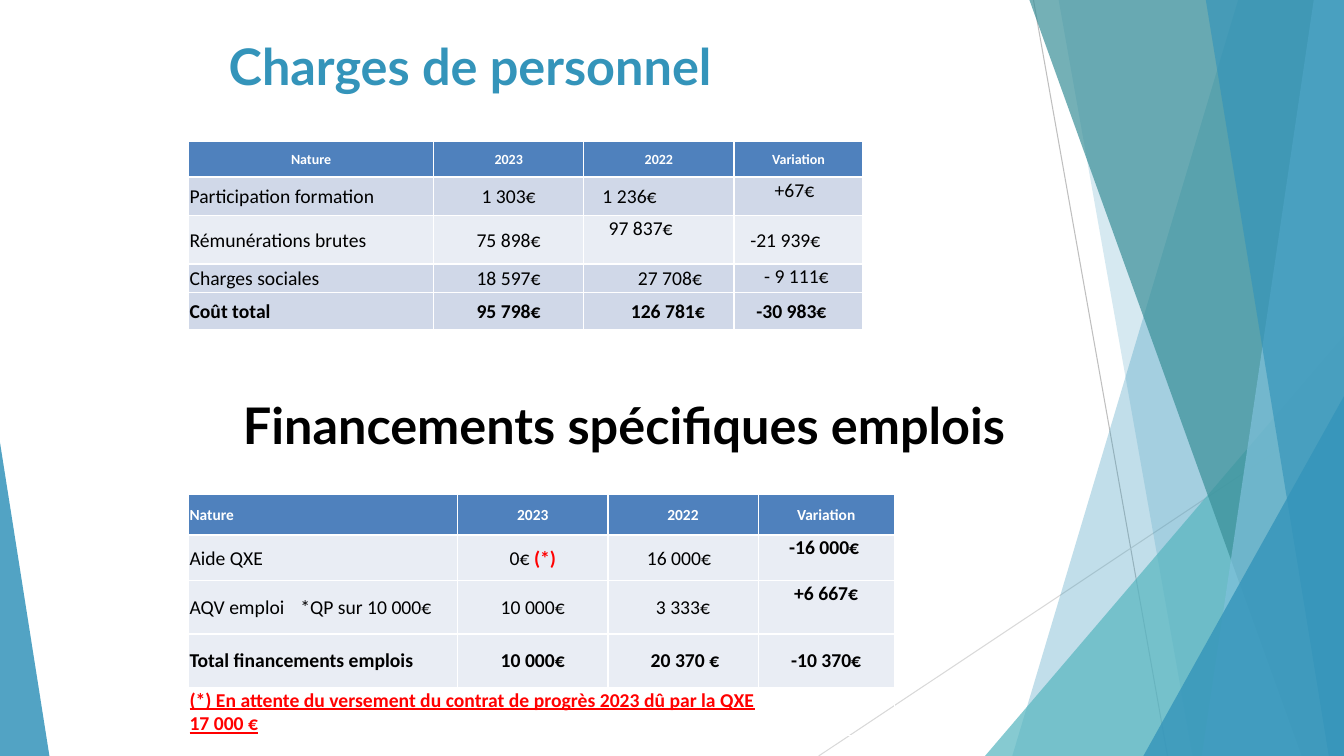
from dataclasses import dataclass

import lxml.etree
import pptx
import pptx.dml.color
import pptx.enum.shapes
import pptx.enum.text
import pptx.oxml.ns
import pptx.util

Inches = pptx.util.Inches
Align = pptx.enum.text.PP_ALIGN
Anchor = pptx.enum.text.MSO_ANCHOR
qn = pptx.oxml.ns.qn

WIDE, HIGH = 13.33, 7.5


@dataclass(frozen=True)
class Theme:
    blue: str = "3494BA"
    teal: str = "58B6C0"
    deep: str = "3A8F98"
    sky: str = "7FC1DB"
    head: str = "4F81BD"
    band: str = "D0D8E8"
    pale: str = "E9EDF4"
    white: str = "FFFFFF"
    black: str = "000000"
    red: str = "FF0000"
    title_font: str = "Lato"
    body_font: str = "Calibri"
    title_size: int = 36
    body_size: int = 14


THEME = Theme()


@dataclass
class Ray:
    start: tuple[float, float]
    end: tuple[float, float]
    color: str


@dataclass
class Pane:
    """Four-sided facet that reaches the right edge."""
    top: float
    foot: float
    color: str
    alpha: int


@dataclass
class Wedge:
    """Right triangle standing on the bottom edge; tip 0 is left, 1 is right."""
    left: float
    top: float
    width: float
    tip: int
    color: str
    alpha: int


@dataclass
class Title:
    text: str
    box: tuple[float, float, float, float]
    color: str
    align: Align


@dataclass
class Item:
    """Table cell; shift moves centred text sideways, mark is a red suffix."""
    text: str
    shift: float = 0
    top: bool = False
    bold: bool = False
    mark: str = ""
    tab: float = 0


@dataclass
class Row:
    height: float
    fill: str
    items: list[Item]
    bold: bool = False


@dataclass
class Grid:
    left: float
    top: float
    cols: list[float]
    head_size: int
    head_align: Align
    rows: list[Row]
    note: str = ""


def rgb(color: str) -> pptx.dml.color.RGBColor:
    return pptx.dml.color.RGBColor.from_string(color)


def style(run, size: int, color: str, font: str, bold: bool) -> None:
    run.font.size = pptx.util.Pt(size)
    run.font.name = font
    run.font.bold = bold
    run.font.color.rgb = rgb(color)


def draw_ray(slide, ray: Ray) -> None:
    line = slide.shapes.add_connector(
        pptx.enum.shapes.MSO_CONNECTOR.STRAIGHT,
        *(Inches(n) for n in ray.start + ray.end))
    line.line.color.rgb = rgb(ray.color)
    line.line.width = pptx.util.Pt(0.75)
    lxml.etree.SubElement(line.element.spPr, qn("a:effectLst"))


def draw_facet(slide, facet: Pane | Wedge) -> None:
    if isinstance(facet, Pane):
        form = slide.shapes.build_freeform(Inches(facet.top), 0)
        form.add_line_segments([(Inches(x), Inches(y)) for x, y in (
            (WIDE, 0), (WIDE, HIGH), (facet.foot, HIGH))])
        shape = form.convert_to_shape()
    else:
        shape = slide.shapes.add_shape(
            pptx.enum.shapes.MSO_SHAPE.ISOSCELES_TRIANGLE,
            Inches(facet.left), Inches(facet.top),
            Inches(facet.width), Inches(HIGH - facet.top))
        shape.adjustments[0] = facet.tip
    shape.shadow.inherit = False
    shape.line.fill.background()
    shape.fill.solid()
    shape.fill.fore_color.rgb = rgb(facet.color)
    tint = shape.element.spPr.find(qn("a:solidFill")).find(qn("a:srgbClr"))
    lxml.etree.SubElement(tint, qn("a:alpha"), val=str(facet.alpha * 1000))


def draw_title(slide, title: Title) -> None:
    box = slide.shapes.add_textbox(*(Inches(n) for n in title.box))
    box.text_frame.word_wrap = True
    box.text_frame.text = title.text
    para = box.text_frame.paragraphs[0]
    para.alignment = title.align
    style(para.runs[0], THEME.title_size, title.color, THEME.title_font, True)


def add_edges(cell, top: float, base: float) -> None:
    for side, width in (("L", 1), ("R", 1), ("T", top), ("B", base)):
        edge = lxml.etree.SubElement(
            cell._tc.get_or_add_tcPr(), qn(f"a:ln{side}"),
            w=str(pptx.util.Pt(width)))
        fill = lxml.etree.SubElement(edge, qn("a:solidFill"))
        lxml.etree.SubElement(fill, qn("a:srgbClr"), val=THEME.white)


def fill_cell(cell, item: Item, align: Align, size: int, color: str,
              bold: bool) -> None:
    cell.margin_left = Inches(0.01 + max(2 * item.shift, 0))
    cell.margin_right = Inches(0.01 + max(-2 * item.shift, 0))
    cell.margin_top, cell.margin_bottom = Inches(0.01), 0
    cell.vertical_anchor = Anchor.TOP if item.top else Anchor.MIDDLE
    cell.text_frame.text = item.text
    para = cell.text_frame.paragraphs[0]
    para.alignment = align
    style(para.runs[0], size, color, THEME.body_font, bold or item.bold)
    if item.mark:
        run = para.add_run()
        run.text = item.mark
        style(run, size, THEME.red, THEME.body_font, True)
    if item.tab:
        tabs = lxml.etree.SubElement(para._p.get_or_add_pPr(), qn("a:tabLst"))
        lxml.etree.SubElement(tabs, qn("a:tab"), pos=str(Inches(item.tab)), algn="l")


def draw_grid(slide, grid: Grid) -> None:
    heights = [row.height for row in grid.rows] + ([0.29] if grid.note else [])
    table = slide.shapes.add_table(
        len(heights), len(grid.cols), Inches(grid.left), Inches(grid.top),
        Inches(sum(grid.cols)), Inches(sum(heights))).table
    table.first_row = table.horz_banding = False
    for col, width in zip(table.columns, grid.cols):
        col.width = Inches(width)
    for line, height in zip(table.rows, heights):
        line.height = Inches(height)
    for r, row in enumerate(grid.rows):
        for c, item in enumerate(row.items):
            cell = table.cell(r, c)
            add_edges(cell, 1.5 if r == 1 else 1, 1.5 if r == 0 else 1)
            cell.fill.solid()
            cell.fill.fore_color.rgb = rgb(row.fill)
            first = grid.head_align if r == 0 else Align.LEFT
            fill_cell(cell, item, Align.CENTER if c else first,
                      THEME.body_size if r else grid.head_size,
                      THEME.black if r else THEME.white, row.bold)
    if grid.note:
        last = len(grid.rows)
        for c in range(len(grid.cols)):
            table.cell(last, c).fill.background()
        cell = table.cell(last, 0)
        cell.merge(table.cell(last, len(grid.cols) - 2))
        fill_cell(cell, Item(grid.note), Align.LEFT, THEME.body_size, THEME.red, True)
        cell.vertical_anchor = Anchor.BOTTOM
        cell.text_frame.paragraphs[0].runs[0].font.underline = True


RAYS = [Ray((10.25, 0), (11.58, HIGH), "BFBFBF"),
        Ray((WIDE, 4.03), (8.12, HIGH), "D9D9D9")]
FACETS = [
    Pane(12.28, 10.04, THEME.blue, 30),
    Pane(10.5, 11.83, THEME.blue, 20),
    Wedge(9.77, 3.33, 3.56, 1, THEME.teal, 72),
    Pane(10.21, 12.91, THEME.deep, 70),
    Pane(13.03, 11.92, THEME.sky, 70),
    Pane(11.96, 13.18, THEME.blue, 65),
    Wedge(11.34, 3.93, 1.99, 1, THEME.blue, 80),
    Wedge(0, 4.39, 0.49, 0, THEME.blue, 85),
]
TITLES = [
    Title("Charges de personnel", (2.17, 0.3, 9, 0.85), THEME.blue, Align.LEFT),
    Title("Financements spécifiques emplois", (1.44, 3.86, 9.5, 0.71),
          THEME.black, Align.CENTER),
]
HEADS = [Item(name) for name in ("Nature", "2023", "2022", "Variation")]
COSTS = Grid(1.87, 1.4, [2.43, 1.49, 1.49, 1.28], 10, Align.CENTER, [
    Row(0.36, THEME.head, HEADS, True),
    Row(0.38, THEME.band, [Item("Participation formation"), Item("1 303€"),
                           Item("1 236€", -0.29), Item("+67€", -0.04, True)]),
    Row(0.48, THEME.pale, [Item("Rémunérations brutes"), Item("75 898€"),
                           Item("97 837€", -0.18, True), Item("-21 939€", -0.13)]),
    Row(0.28, THEME.band, [Item("Charges sociales"), Item("18 597€"),
                           Item("27 708€", 0.11), Item("- 9 111€", -0.02, True)]),
    Row(0.37, THEME.band, [Item("Coût total"), Item("95 798€"),
                           Item("126 781€", 0.09), Item("-30 983€", -0.07)], True),
])
FUNDS = Grid(1.87, 4.9, [2.67, 1.49, 1.49, 1.35], 11, Align.LEFT, [
    Row(0.41, THEME.head, HEADS, True),
    Row(0.45, THEME.pale, [Item("Aide QXE"), Item("0€ ", mark="(*)"),
                           Item("16 000€", -0.04), Item("-16 000€", -0.02, True, True)]),
    Row(0.53, THEME.pale, [Item("AQV emploi\t*QP sur 10 000€", tab=1.1), Item("10 000€"),
                           Item("3 333€"), Item("+6 667€", 0, True, True)]),
    Row(0.53, THEME.pale, [Item("Total financements emplois"), Item("10 000€"),
                           Item("20 370 €", 0.02), Item("-10 370€")], True),
], "(*) En attente du versement du contrat de progrès 2023 dû par la QXE 17 000 €")


def main() -> None:
    deck = pptx.Presentation()
    deck.slide_width, deck.slide_height = Inches(WIDE), Inches(HIGH)
    slide = deck.slides.add_slide(deck.slide_layouts[6])
    # Faceted backdrop
    for ray in RAYS:
        draw_ray(slide, ray)
    for facet in FACETS:
        draw_facet(slide, facet)
    # Headings and tables
    for title in TITLES:
        draw_title(slide, title)
    for grid in (COSTS, FUNDS):
        draw_grid(slide, grid)
    deck.save("out.pptx")


if __name__ == "__main__":
    main()
